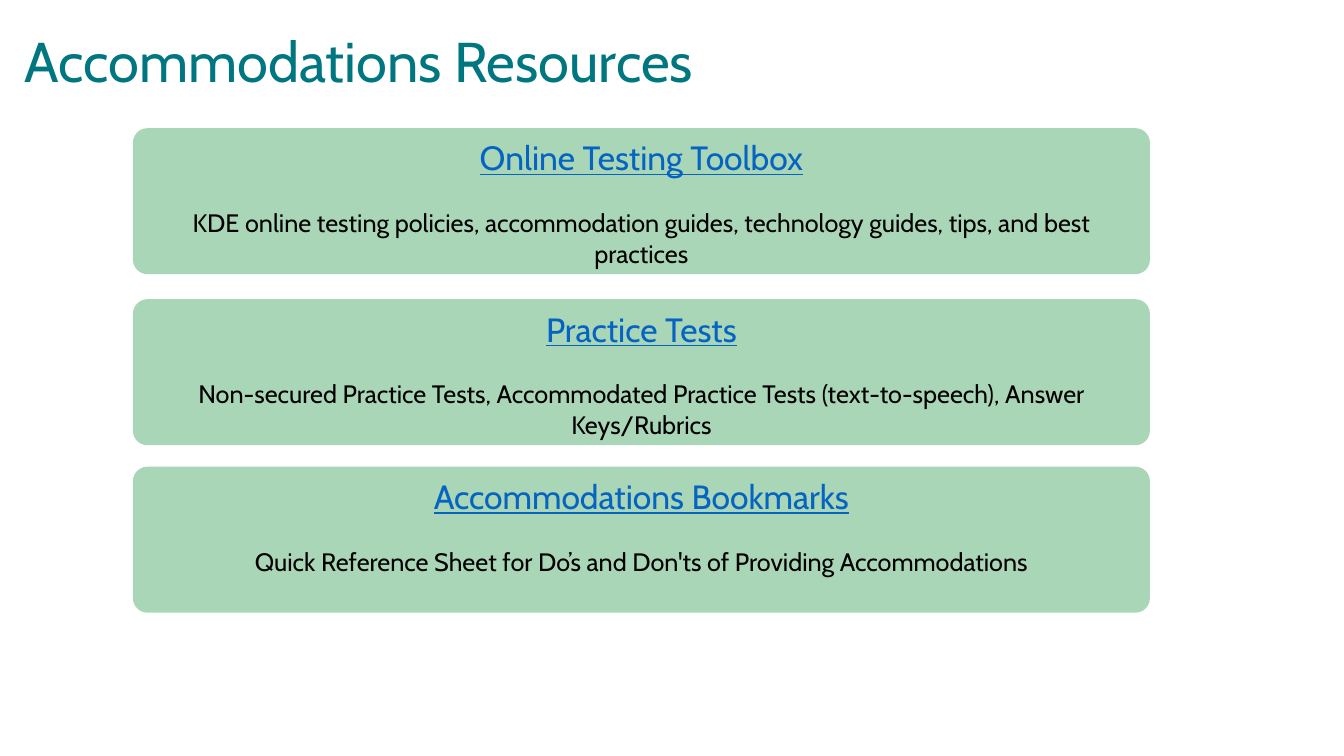
from dataclasses import dataclass

from pptx import Presentation
from pptx.dml.color import RGBColor
from pptx.enum.shapes import MSO_SHAPE
from pptx.enum.text import MSO_ANCHOR, PP_ALIGN
from pptx.util import Cm, Pt


@dataclass(frozen=True)
class Theme:
    font: str = "Cabin"
    teal: RGBColor = RGBColor(0x00, 0x77, 0x80)
    green: RGBColor = RGBColor(0xAA, 0xD6, 0xB8)
    blue: RGBColor = RGBColor(0x05, 0x63, 0xC1)
    black: RGBColor = RGBColor(0x00, 0x00, 0x00)
    title_size: Pt = Pt(40)
    heading_size: Pt = Pt(24)
    body_size: Pt = Pt(18)
    heading_gap: Pt = Pt(21.5)


THEME = Theme()

# Top edge in cm, heading, description
RESOURCES = [
    (3.23, "Online Testing Toolbox",
     "KDE online testing policies, accommodation guides, technology guides, "
     "tips, and best practices"),
    (7.54, "Practice Tests",
     "Non-secured Practice Tests, Accommodated Practice Tests "
     "(text-to-speech), Answer Keys/Rubrics"),
    (11.76, "Accommodations Bookmarks",
     "Quick Reference Sheet for Do’s and Don'ts of Providing Accommodations"),
]


def add_run(p, text, size, color, underline=False):
    r = p.add_run()
    r.text = text
    r.font.name = THEME.font
    r.font.size = size
    r.font.color.rgb = color
    r.font.underline = underline


def add_title(s, text):
    tf = s.shapes.add_textbox(Cm(0.38), Cm(0.71), Cm(29.21), Cm(1.85)).text_frame
    tf.word_wrap = True
    tf.vertical_anchor = MSO_ANCHOR.MIDDLE
    p = tf.paragraphs[0]
    p.line_spacing = 0.9
    add_run(p, text, THEME.title_size, THEME.teal)


def add_resource_card(s, top, heading, description):
    sp = s.shapes.add_shape(MSO_SHAPE.ROUNDED_RECTANGLE,
                            Cm(3.35), Cm(top), Cm(25.63), Cm(3.68))
    sp.adjustments[0] = 0.1
    sp.shadow.inherit = False
    sp.fill.solid()
    sp.fill.fore_color.rgb = THEME.green
    sp.line.fill.background()

    tf = sp.text_frame
    tf.word_wrap = True
    tf.vertical_anchor = MSO_ANCHOR.TOP
    p = tf.paragraphs[0]
    p.alignment = PP_ALIGN.CENTER
    add_run(p, heading, THEME.heading_size, THEME.blue, underline=True)
    p = tf.add_paragraph()
    p.alignment = PP_ALIGN.CENTER
    p.space_before = THEME.heading_gap
    add_run(p, description, THEME.body_size, THEME.black)


def main():
    prs = Presentation()
    prs.slide_width, prs.slide_height = Cm(33.87), Cm(19.05)
    s = prs.slides.add_slide(prs.slide_layouts[6])
    add_title(s, "Accommodations Resources")
    for top, heading, description in RESOURCES:
        add_resource_card(s, top, heading, description)
    prs.save("out.pptx")


if __name__ == "__main__":
    main()
